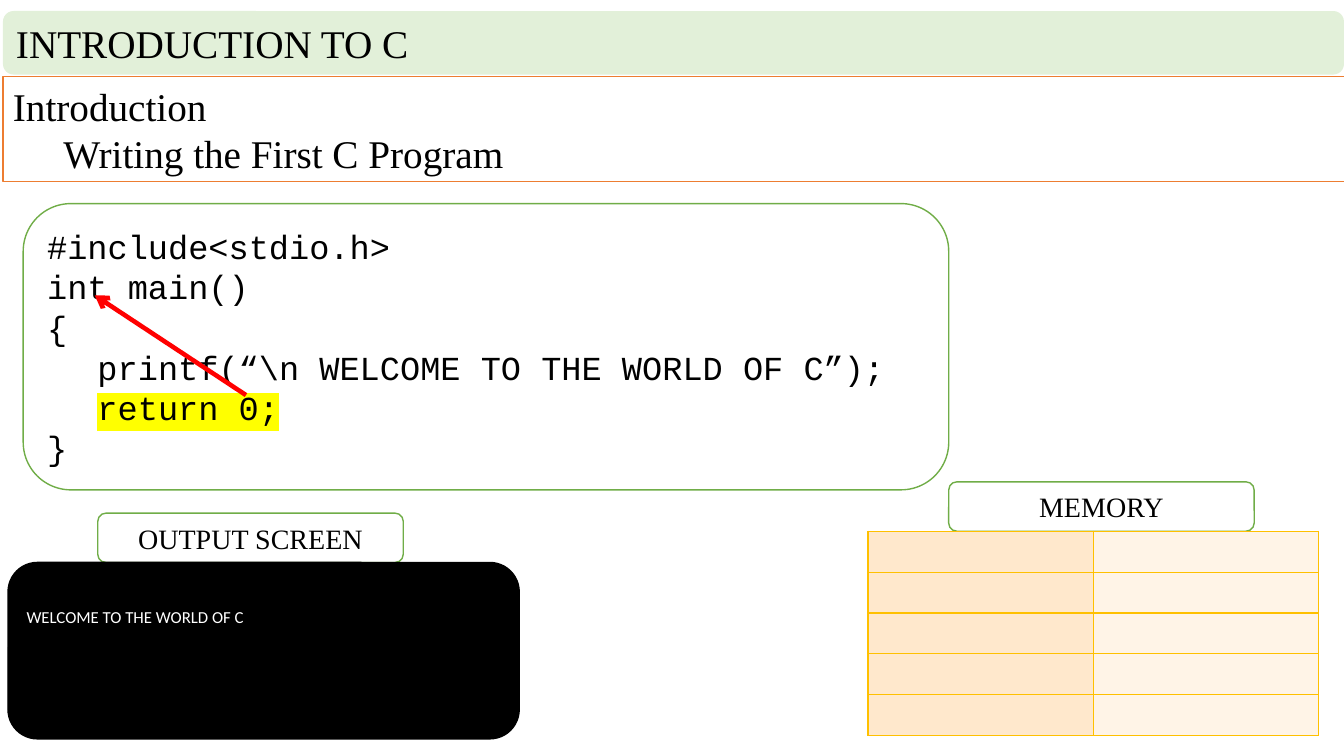
from lxml import etree
from pptx import Presentation
from pptx.dml.color import RGBColor
from pptx.enum.shapes import MSO_CONNECTOR, MSO_SHAPE
from pptx.enum.text import MSO_ANCHOR, PP_ALIGN
from pptx.oxml.ns import qn
from pptx.util import Inches, Pt

RECTANGLE = MSO_SHAPE.RECTANGLE
ROUNDED = MSO_SHAPE.FLOWCHART_ALTERNATE_PROCESS
STRAIGHT = MSO_CONNECTOR.STRAIGHT
TOP, MIDDLE = MSO_ANCHOR.TOP, MSO_ANCHOR.MIDDLE
LEFT, CENTER = PP_ALIGN.LEFT, PP_ALIGN.CENTER

SERIF, MONO, SANS = "Times New Roman", "Courier New", "Calibri"
BLACK, WHITE = "000000", "FFFFFF"
GREEN, PALE_GREEN, ORANGE = "70AD47", "E2F0D9", "ED7D31"
GOLD, PEACH, PALE_PEACH = "FFC000", "FFE8CC", "FFF4E7"
RED, YELLOW = "FF0000", "FFFF00"


def rgb(value):
    return RGBColor.from_string(value)


def add_solid_fill(parent, tag, color):
    """Append a child holding a colour, wrapped in a:solidFill for lines."""
    child = etree.SubElement(parent, qn(tag))
    fill = etree.SubElement(child, qn("a:solidFill"))
    etree.SubElement(fill, qn("a:srgbClr"), val=color)
    return child


class LessonSlide:
    def __init__(self, deck):
        self.slide = deck.slides.add_slide(deck.slide_layouts[6])
        self.shapes = self.slide.shapes

    def panel(self, at, lines, size, font=SERIF, color=BLACK, fill=None,
              line=None, kind=ROUNDED, align=LEFT, anchor=MIDDLE, top=0.05):
        """Draw a filled or outlined shape; lines are (text, indent, highlight)."""
        box = self.shapes.add_shape(kind, *map(Inches, at))
        box.shadow.inherit = False
        if fill:
            box.fill.solid()
            box.fill.fore_color.rgb = rgb(fill)
        else:
            box.fill.background()
        if line:
            box.line.color.rgb = rgb(line)
            box.line.width = Pt(1)
        else:
            box.line.fill.background()
        frame = box.text_frame
        frame.word_wrap = True
        frame.vertical_anchor = anchor
        frame.margin_top = Inches(top)
        for index, (text, indent, highlight) in enumerate(lines):
            para = frame.add_paragraph() if index else frame.paragraphs[0]
            para.alignment = align
            if indent:
                para.level = 1
                para._p.get_or_add_pPr().set("marL", str(Inches(indent)))
            self.span(para, text, size, font, color, highlight)

    def span(self, para, text, size, font, color, highlight):
        span = para.add_run()
        span.text = text
        span.font.size = Pt(size)
        span.font.color.rgb = rgb(color)
        if highlight:
            mark = etree.SubElement(span._r.get_or_add_rPr(), qn("a:highlight"))
            etree.SubElement(mark, qn("a:srgbClr"), val=highlight)
        span.font.name = font

    def label(self, left, top, text):
        self.panel((left, top, 3.03, 0.49), [(text, 0, None)], 20,
                   line=GREEN, align=CENTER)

    def grid(self, at, rows, column_fills, border):
        table = self.shapes.add_table(rows, len(column_fills),
                                      *map(Inches, at)).table
        table.first_row = table.horz_banding = False
        for row in table.rows:
            for cell, fill in zip(row.cells, column_fills):
                properties = cell._tc.get_or_add_tcPr()
                for side in ("a:lnL", "a:lnR", "a:lnT", "a:lnB"):
                    edge = add_solid_fill(properties, side, border)
                    edge.set("w", str(Pt(1)))
                cell.fill.solid()
                cell.fill.fore_color.rgb = rgb(fill)

    def arrow(self, start, end, color, width):
        arrow = self.shapes.add_connector(STRAIGHT, *map(Inches, start + end))
        arrow.line.color.rgb = rgb(color)
        arrow.line.width = Pt(width)
        etree.SubElement(arrow.line._get_or_add_ln(), qn("a:tailEnd"), type="arrow")
        etree.SubElement(arrow._element.spPr, qn("a:effectLst"))


def main():
    deck = Presentation()
    deck.slide_width, deck.slide_height = Inches(13.33), Inches(7.5)
    lesson = LessonSlide(deck)

    lesson.panel((0.03, 0.11, 13.3, 0.63), [("INTRODUCTION TO C", 0, None)], 28,
                 fill=PALE_GREEN)
    lesson.panel((0.03, 0.76, 13.32, 1.04),
                 [("Introduction", 0, None),
                  ("Writing the First C Program", 0.5, None)],
                 28, fill=WHITE, line=ORANGE, kind=RECTANGLE)

    program = [
        ("#include<stdio.h>", 0, None),
        ("int main()", 0, None),
        ("{", 0, None),
        ("printf(“\\n WELCOME TO THE WORLD OF C”);", 0.5, None),
        ("return 0;", 0.5, YELLOW),
        ("}", 0, None),
    ]
    lesson.panel((0.23, 2.02, 9.18, 2.84), program, 24, font=MONO, line=GREEN)

    lesson.label(0.97, 5.09, "OUTPUT SCREEN")
    lesson.panel((0.08, 5.58, 5.07, 1.75),
                 [("WELCOME TO THE WORLD OF C", 0, None)], 12, font=SANS,
                 color=WHITE, fill=BLACK, line=BLACK, anchor=TOP, top=0.35)

    lesson.label(9.41, 4.78, "MEMORY")
    lesson.grid((8.61, 5.27, 4.47, 2), 5, (PEACH, PALE_PEACH), GOLD)
    lesson.arrow((2.44, 3.92), (0.94, 2.93), RED, 3.25)

    deck.save("out.pptx")


if __name__ == "__main__":
    main()
